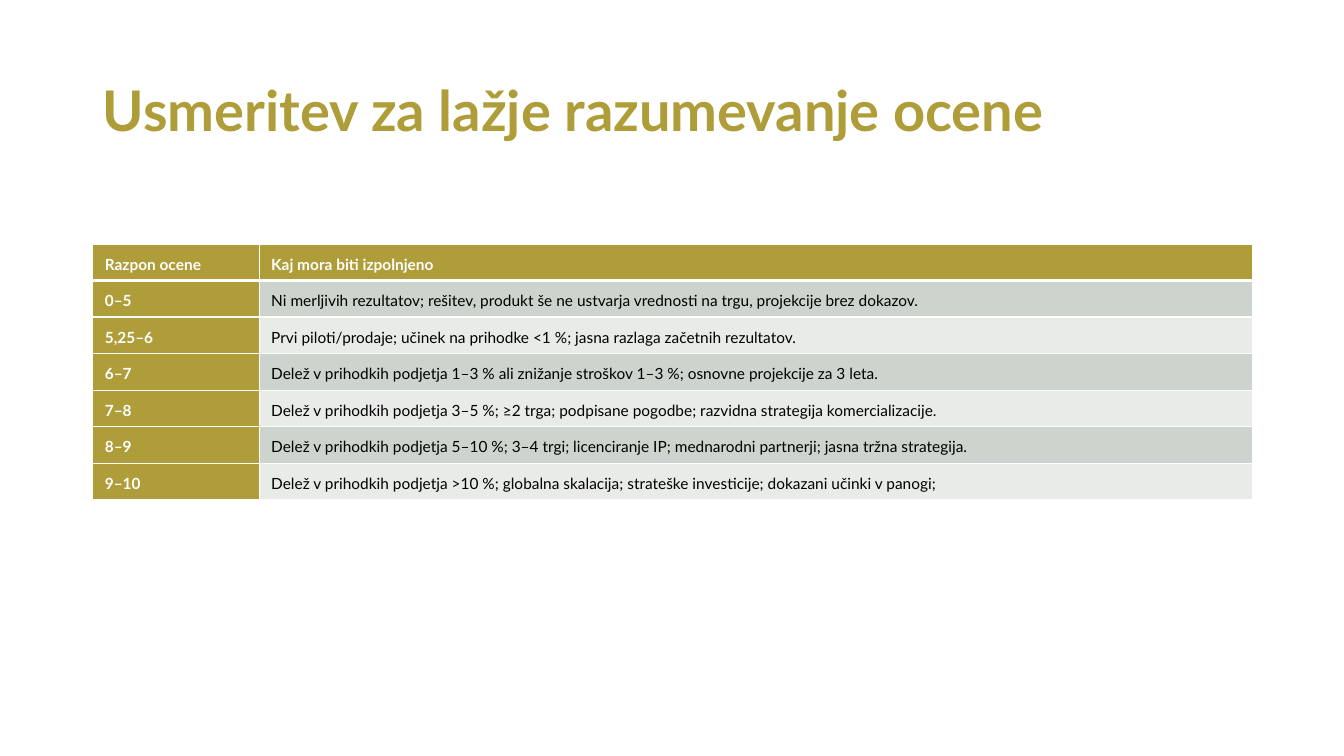
from pptx import Presentation
from pptx.dml.color import RGBColor
from pptx.enum.text import MSO_ANCHOR, PP_ALIGN
from pptx.oxml import parse_xml
from pptx.oxml.ns import nsdecls
from pptx.util import Inches, Pt

# Content
TITLE = "Usmeritev za lažje razumevanje ocene"
ROWS = [
    ("Razpon ocene", "Kaj mora biti izpolnjeno"),
    ("0–5", "Ni merljivih rezultatov; rešitev, produkt še ne ustvarja vrednosti na trgu, "
            "projekcije brez dokazov."),
    ("5,25–6", "Prvi piloti/prodaje; učinek na prihodke <1 %; jasna razlaga začetnih rezultatov."),
    ("6–7", "Delež v prihodkih podjetja 1–3 % ali znižanje stroškov 1–3 %; "
            "osnovne projekcije za 3 leta."),
    ("7–8", "Delež v prihodkih podjetja 3–5 %; ≥2 trga; podpisane pogodbe; "
            "razvidna strategija komercializacije."),
    ("8–9", "Delež v prihodkih podjetja 5–10 %; 3–4 trgi; licenciranje IP; "
            "mednarodni partnerji; jasna tržna strategija."),
    ("9–10", "Delež v prihodkih podjetja >10 %; globalna skalacija; strateške investicije; "
             "dokazani učinki v panogi;"),
]
COL_WIDTHS = (1.65, 9.85)
TABLE_HEIGHT = 2.48

FONT = "Lato"
GOLD = RGBColor(0xAE, 0x9D, 0x39)
WHITE = RGBColor(0xFF, 0xFF, 0xFF)
BLACK = RGBColor(0x00, 0x00, 0x00)
BANDS = (RGBColor(0xE8, 0xEB, 0xE8), RGBColor(0xCC, 0xD4, 0xCD))


def set_font(p, size, color, bold):
    p.font.name = FONT
    p.font.size = Pt(size)
    p.font.bold = bold
    p.font.color.rgb = color


def add_borders(cell, widths):
    """Draw white cell borders; widths are points for left, right, top, bottom."""
    tc_pr = cell._tc.get_or_add_tcPr()
    for i, (side, width) in enumerate(zip("LRTB", widths)):
        tc_pr.insert(i, parse_xml(
            f'<a:ln{side} {nsdecls("a")} w="{Pt(width)}"><a:solidFill>'
            f'<a:srgbClr val="{WHITE}"/></a:solidFill></a:ln{side}>'))


prs = Presentation()
prs.slide_width, prs.slide_height = Inches(13.33), Inches(7.5)
s = prs.slides.add_slide(prs.slide_layouts[5])

# Title
title = s.shapes.title
title.left, title.top = Inches(0.92), Inches(0.39)
title.width, title.height = Inches(10.98), Inches(1.46)
tf = title.text_frame
tf.text = TITLE
tf.vertical_anchor = MSO_ANCHOR.MIDDLE
p = tf.paragraphs[0]
p.alignment = PP_ALIGN.LEFT
p.line_spacing = 0.9
set_font(p, 40, GOLD, True)

# Table: gold header and first column, banded descriptions
table = s.shapes.add_table(len(ROWS), len(COL_WIDTHS), Inches(0.92), Inches(2.42),
                           Inches(sum(COL_WIDTHS)), Inches(TABLE_HEIGHT)).table
table.first_col = True
for column, width in zip(table.columns, COL_WIDTHS):
    column.width = Inches(width)

for r, row in enumerate(ROWS):
    for c, text in enumerate(row):
        cell = table.cell(r, c)
        is_heading = r == 0 or c == 0
        cell.text = text
        cell.margin_left, cell.margin_right = Inches(0.12), Inches(0.08)
        cell.margin_top, cell.margin_bottom = Inches(0.08), Inches(0.07)
        cell.fill.solid()
        cell.fill.fore_color.rgb = GOLD if is_heading else BANDS[r % 2]
        add_borders(cell, (1, 1, 3 if r == 1 else 1, 3 if r == 0 else 1))
        p = cell.text_frame.paragraphs[0]
        p.line_spacing = 1.15
        p.space_after = Pt(10)
        set_font(p, 11, WHITE if is_heading else BLACK, is_heading)

prs.save("out.pptx")
